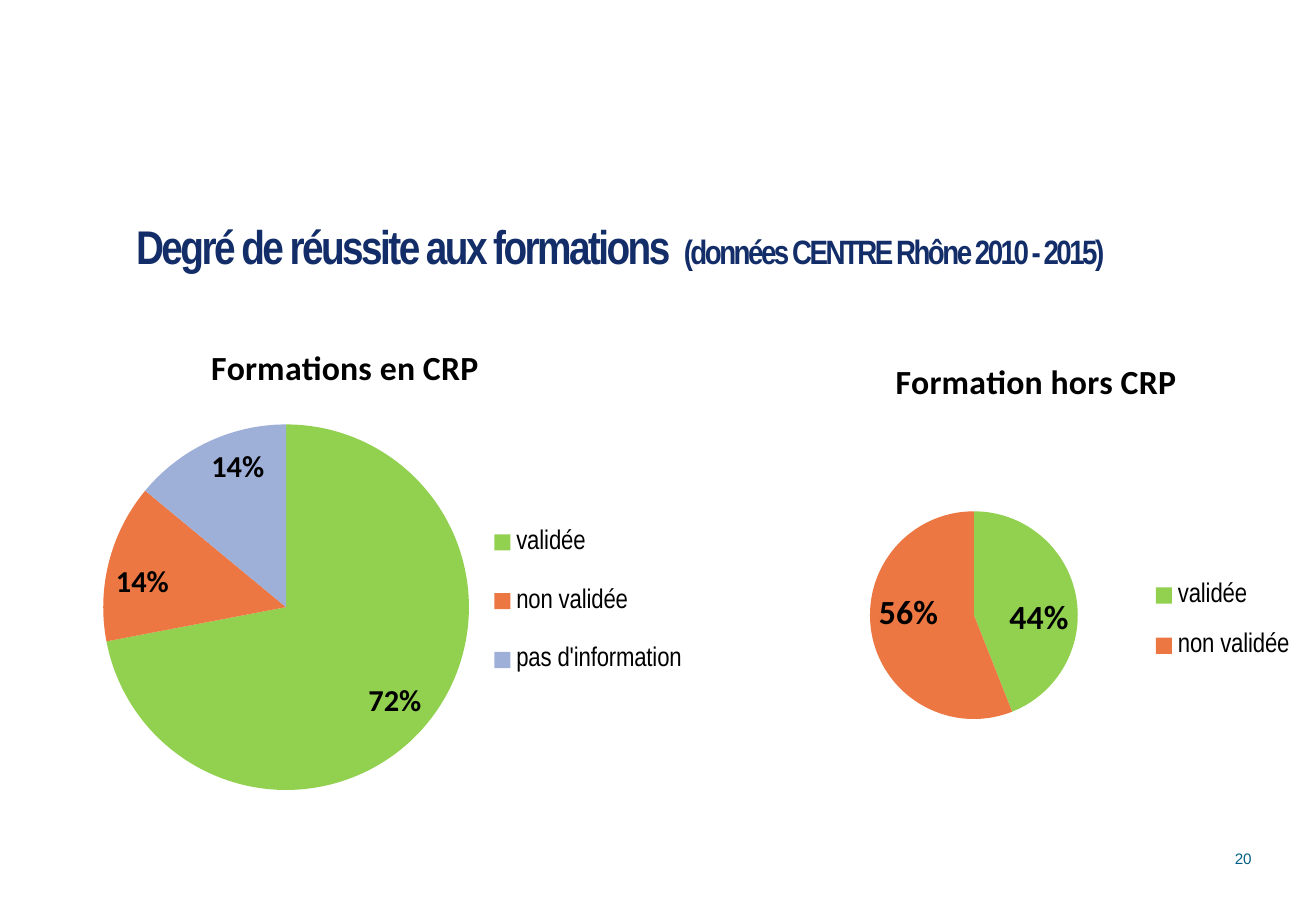
from dataclasses import dataclass

from lxml import etree
from pptx import Presentation
from pptx.chart.data import CategoryChartData
from pptx.dml.color import RGBColor
from pptx.enum.chart import XL_CHART_TYPE, XL_LABEL_POSITION, XL_LEGEND_POSITION
from pptx.enum.text import MSO_ANCHOR, MSO_AUTO_SIZE, PP_ALIGN
from pptx.oxml.ns import qn
from pptx.util import Pt

PIE = XL_CHART_TYPE.PIE
INSIDE_END = XL_LABEL_POSITION.INSIDE_END
LEGEND_RIGHT = XL_LEGEND_POSITION.RIGHT
MIDDLE, BOTTOM = MSO_ANCHOR.MIDDLE, MSO_ANCHOR.BOTTOM
LEFT, RIGHT = PP_ALIGN.LEFT, PP_ALIGN.RIGHT
NO_AUTOFIT = MSO_AUTO_SIZE.NONE

PX = 9144  # 100 px to the inch


@dataclass(frozen=True)
class Theme:
    navy: str = "132D69"
    teal: str = "005F84"
    black: str = "000000"
    slices: tuple = ("92D050", "EC7742", "9FB0D8")
    sans: str = "Arial"
    narrow: str = "Arial Narrow"
    chart: str = "Calibri"
    title: int = 28
    subtitle: int = 20
    chart_title: int = 20
    chart_text: int = 10
    legend: int = 16
    number: int = 9
    tracking: int = -150


THEME = Theme()


def emu(*lengths):
    return [n * PX for n in lengths]


def style(font, name, size, color, bold=False):
    font.name, font.size, font.bold = name, Pt(size), bold
    font.color.rgb = RGBColor.from_string(color)


def place(sp, box):
    sp.left, sp.top, sp.width, sp.height = emu(*box)


def set_margins(tf, left, top, right, bottom):
    tf.margin_left, tf.margin_top, tf.margin_right, tf.margin_bottom = emu(left, top, right, bottom)


def set_layout(element, before, box, part, inner=False):
    """Fix a chart part at a px box, relative to the chart box, ahead of the first tag in before."""
    for old in element.findall(qn("c:layout")):
        element.remove(old)
    layout = etree.Element(qn("c:layout"))
    manual = etree.SubElement(layout, qn("c:manualLayout"))
    settings = [("layoutTarget", "inner")] if inner else []
    settings += [("xMode", "edge"), ("yMode", "edge")]
    sizes = (box[2], box[3], box[2], box[3])
    settings += [(key, f"{n / size:.3f}") for key, n, size in zip("xywh", part, sizes)]
    for key, value in settings:
        etree.SubElement(manual, qn(f"c:{key}")).set("val", value)
    next(child for child in element if child.tag in map(qn, before)).addprevious(layout)


def add_title(slide, box, heading, source):
    sp = slide.shapes.title
    place(sp, box)
    tf = sp.text_frame
    tf.auto_size, tf.vertical_anchor = NO_AUTOFIT, MIDDLE
    set_margins(tf, 0, 0, 0, 0)
    p = tf.paragraphs[0]
    p.alignment = LEFT
    for text, size in ((heading, THEME.title), (source, THEME.subtitle)):
        r = p.add_run()
        r.text = text
        style(r.font, THEME.narrow, size, THEME.navy, True)
        r._r.get_or_add_rPr().set("spc", str(THEME.tracking))


def add_page_number(slide, box, number):
    tf = slide.shapes.add_textbox(*emu(*box)).text_frame
    tf.word_wrap, tf.vertical_anchor = True, BOTTOM
    set_margins(tf, 10, 5, 0, 5)
    tf.text = number
    p = tf.paragraphs[0]
    p.alignment = RIGHT
    style(p.runs[0].font, THEME.sans, THEME.number, THEME.teal)


def add_pie(slide, box, title, results, label_size, title_at, plot, legend):
    """Draw a pie; title_at, plot and legend are px positions within the box."""
    data = CategoryChartData()
    data.categories = list(results)
    data.add_series("Résultats", results.values())
    chart = slide.shapes.add_chart(PIE, *emu(*box), data).chart
    style(chart.font, THEME.chart, THEME.chart_text, THEME.black)

    chart.has_title = True
    tf = chart.chart_title.text_frame
    tf.text = title
    style(tf.paragraphs[0].runs[0].font, THEME.chart, THEME.chart_title, THEME.black, True)
    chart.chart_title.include_in_layout = False
    set_layout(chart.chart_title._element, ["c:overlay"], box, title_at)

    chart.has_legend = True
    chart.legend.position = LEGEND_RIGHT
    chart.legend.include_in_layout = False
    style(chart.legend.font, THEME.narrow, THEME.legend, THEME.black)
    set_layout(chart.legend._element, ["c:overlay"], box, legend)

    pie = chart.plots[0]
    set_layout(pie._element.getparent(), ["c:pieChart"], box, plot, inner=True)
    pie.vary_by_categories = True
    for i, color in enumerate(THEME.slices[:len(results)]):
        fill = pie.series[0].points[i].format.fill
        fill.solid()
        fill.fore_color.rgb = RGBColor.from_string(color)
    pie.has_data_labels = True
    labels = pie.data_labels
    labels.show_percentage, labels.show_value = True, False
    labels.number_format, labels.number_format_is_linked = "0%", False
    labels.position = INSIDE_END
    style(labels.font, THEME.chart, label_size, THEME.black, True)


def main():
    prs = Presentation()
    prs.slide_width, prs.slide_height = emu(1083, 750)
    slide = prs.slides.add_slide(prs.slide_layouts[5])
    add_title(slide, (112, 174, 918, 56),
              "Degré de réussite aux formations ", " (données CENTRE Rhône 2010 - 2015)")
    add_page_number(slide, (965, 667, 65, 52), "20")
    add_pie(slide, (79, 258, 496, 419), "Formations en CRP",
            {"validée": 72, "non validée": 14, "pas d'information": 14}, 18,
            title_at=(90, 20), plot=(6, 75, 301, 334), legend=(320, 150, 170, 174))
    add_pie(slide, (622, 267, 451, 387), "Formation hors CRP",
            {"validée": 44, "non validée": 56}, 20,
            title_at=(110, 22), plot=(14, 154, 331, 171), legend=(320, 192, 128, 104))
    prs.save("out.pptx")


if __name__ == "__main__":
    main()
